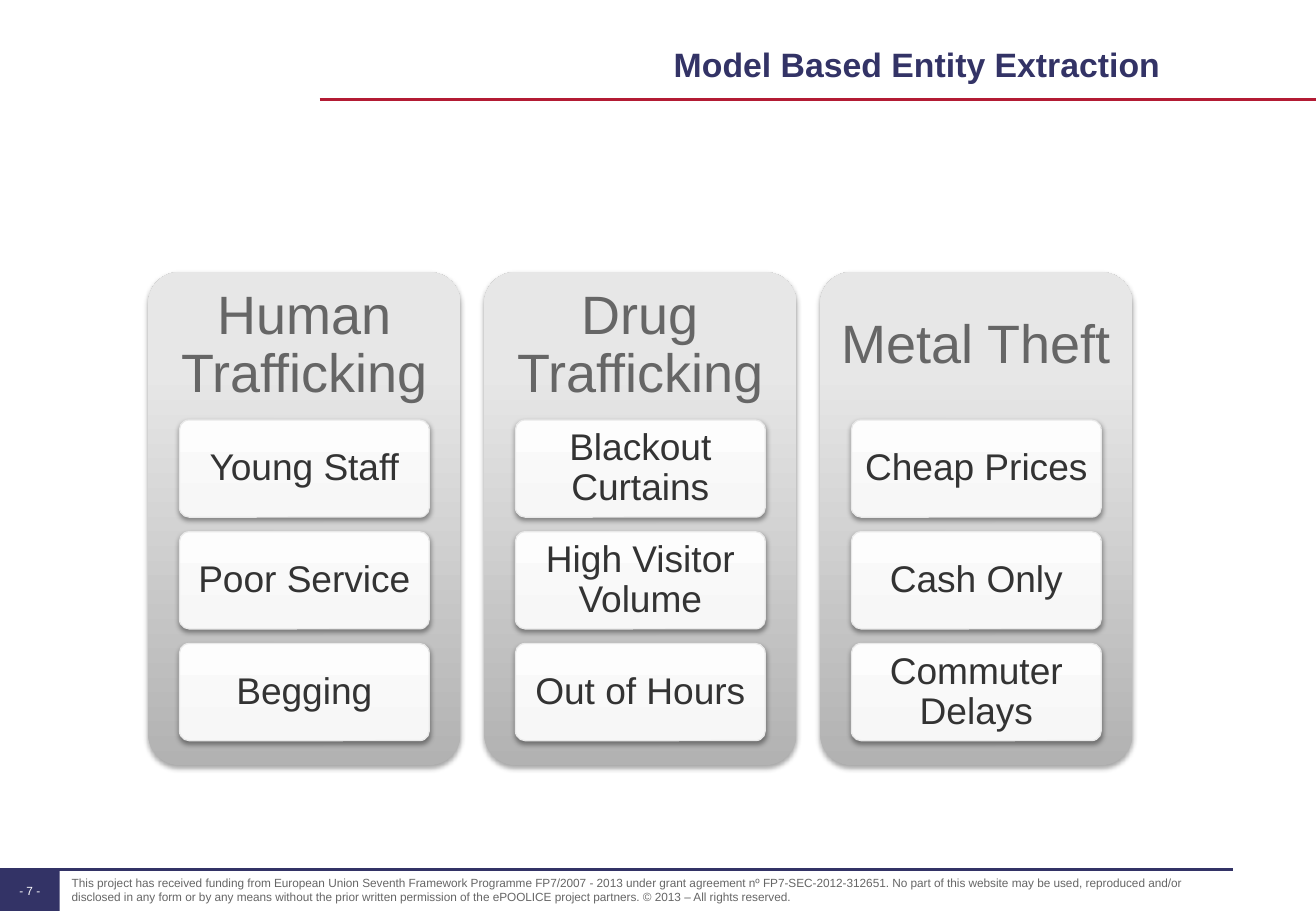
from lxml.etree import SubElement
from pptx import Presentation
from pptx.dml.color import RGBColor
from pptx.enum.shapes import MSO_CONNECTOR, MSO_SHAPE
from pptx.enum.text import MSO_ANCHOR, MSO_AUTO_SIZE, PP_ALIGN
from pptx.oxml import parse_xml
from pptx.oxml.ns import nsdecls, qn
from pptx.util import Inches, Pt

SLIDE_W, SLIDE_H = 10.83, 7.5
NAVY, RED, GREY, DARK, WHITE = "333366", "B31B34", "666666", "333333", "FFFFFF"
COLUMN_STOPS = [(0, "B2B2B2"), (80, "E7E7E7"), (100, "E8E8E8")]
CARD_STOPS = [(0, "F7F7F7"), (35, "F9F9F9"), (100, "FDFDFD")]

# Column and card grid, in inches
GRID_LEFT, GRID_TOP = 1.22, 2.24
COLUMN_W, COLUMN_H, COLUMN_PITCH = 2.57, 4.06, 2.765
HEADING_H = 0.3 * COLUMN_H
CARD_W, CARD_H, CARD_PITCH = 0.8 * COLUMN_W, 0.8, 0.92
FOOTER_TOP = 7.16

INDICATORS = {
    "Human Trafficking": ["Young Staff", "Poor Service", "Begging"],
    "Drug Trafficking": ["Blackout Curtains", "High Visitor Volume", "Out of Hours"],
    "Metal Theft": ["Cheap Prices", "Cash Only", "Commuter Delays"],
}
FUNDING_NOTE = (
    "This project has received funding from European Union Seventh Framework Programme "
    "FP7/2007 - 2013 under grant agreement nº FP7-SEC-2012-312651. No part of this website "
    "may be used, reproduced and/or disclosed in any form or by any means without the prior "
    "written permission of the ePOOLICE project partners. © 2013 – All rights reserved."
)


def rgb(hex_color):
    return RGBColor.from_string(hex_color)


def write_text(shape, text, size, color, bold=False, align=PP_ALIGN.CENTER,
               anchor=MSO_ANCHOR.MIDDLE, insets=(0, 0, 0, 0), spacing=None):
    """Fill a shape with one paragraph; insets are left, top, right, bottom."""
    frame = shape.text_frame
    frame.word_wrap = True
    frame.auto_size = MSO_AUTO_SIZE.NONE
    frame.vertical_anchor = anchor
    (frame.margin_left, frame.margin_top,
     frame.margin_right, frame.margin_bottom) = map(Inches, insets)
    paragraph = frame.paragraphs[0]
    paragraph.alignment = align
    paragraph.line_spacing = spacing
    run = paragraph.add_run()
    run.text = text
    run.font.name = "Arial"
    run.font.size = Pt(size)
    run.font.bold = bold
    run.font.color.rgb = rgb(color)


def add_text(slide, left, top, width, height, text, **text_format):
    box = slide.shapes.add_textbox(*map(Inches, (left, top, width, height)))
    write_text(box, text, **text_format)


def add_rule(slide, left, right, y, color):
    rule = slide.shapes.add_connector(
        MSO_CONNECTOR.STRAIGHT, Inches(left), Inches(y), Inches(right), Inches(y))
    rule.line.color.rgb = rgb(color)
    rule.line.width = Pt(1.5)
    SubElement(rule._element.spPr, qn("a:effectLst"))


def fill_upward(shape, stops):
    """Give a shape a gradient whose first stop lies at the bottom."""
    stop_xml = "".join(
        f'<a:gs pos="{share * 1000}"><a:srgbClr val="{color}"/></a:gs>'
        for share, color in stops)
    gradient = parse_xml(
        f'<a:gradFill {nsdecls("a")} rotWithShape="1"><a:gsLst>{stop_xml}</a:gsLst>'
        '<a:lin ang="16200000" scaled="0"/></a:gradFill>')
    shape._element.spPr.find(qn("a:prstGeom")).addnext(gradient)


def drop_shadow(shape, opacity, distance):
    shape.shadow.inherit = False
    shape._element.spPr.find(qn("a:effectLst")).append(parse_xml(
        f'<a:outerShdw {nsdecls("a")} blurRad="{Pt(3.1)}" dist="{Pt(distance)}" '
        f'dir="5400000" rotWithShape="0"><a:srgbClr val="000000">'
        f'<a:alpha val="{opacity * 1000}"/></a:srgbClr></a:outerShdw>'))


def add_panel(slide, left, top, width, height, stops, opacity, distance, outline=None):
    panel = slide.shapes.add_shape(
        MSO_SHAPE.ROUNDED_RECTANGLE, *map(Inches, (left, top, width, height)))
    panel.adjustments[0] = 0.1
    fill_upward(panel, stops)
    if outline:
        panel.line.color.rgb = rgb(outline)
        panel.line.width = Pt(0.75)
    else:
        panel.line.fill.background()
    drop_shadow(panel, opacity, distance)
    return panel


def add_column(slide, left, heading, indicators):
    add_panel(slide, left, GRID_TOP, COLUMN_W, COLUMN_H, COLUMN_STOPS, 35, 1.8)
    add_text(slide, left, GRID_TOP, COLUMN_W, HEADING_H, heading,
             size=32, color=GREY, insets=[0.13] * 4, spacing=0.9)
    for row, indicator in enumerate(indicators):
        card = add_panel(slide, left + (COLUMN_W - CARD_W) / 2,
                         GRID_TOP + HEADING_H + row * CARD_PITCH,
                         CARD_W, CARD_H, CARD_STOPS, 38, 1.6, outline="E9E9E9")
        write_text(card, indicator, size=22, color=DARK,
                   insets=(0.06, 0.05, 0.06, 0.05), spacing=0.9)


def add_footer(slide):
    page_tab = slide.shapes.add_shape(
        MSO_SHAPE.RECTANGLE, 0, Inches(FOOTER_TOP), Inches(0.49),
        Inches(SLIDE_H - FOOTER_TOP))
    page_tab.shadow.inherit = False
    page_tab.fill.solid()
    page_tab.fill.fore_color.rgb = rgb(NAVY)
    page_tab.line.fill.background()
    write_text(page_tab, "- 7 -", size=7, color=WHITE)
    add_rule(slide, 0, 10.15, FOOTER_TOP, NAVY)
    add_text(slide, 0.59, FOOTER_TOP, 9.41, 0.33, FUNDING_NOTE,
             size=7, color=GREY, align=PP_ALIGN.LEFT)


def add_title(slide, text):
    title = slide.shapes.title
    title.left, title.top, title.width, title.height = map(
        Inches, (GRID_LEFT, 0.17, 8.53, 0.9))
    write_text(title, text, size=20, color=NAVY, bold=True, align=PP_ALIGN.RIGHT,
               anchor=MSO_ANCHOR.TOP, insets=(0, 0.16, 0.2, 0), spacing=1.1)
    add_rule(slide, 2.63, SLIDE_W, 0.82, RED)


def main():
    deck = Presentation()
    deck.slide_width, deck.slide_height = Inches(SLIDE_W), Inches(SLIDE_H)
    slide = deck.slides.add_slide(deck.slide_layouts.get_by_name("Title Only"))
    add_footer(slide)
    add_title(slide, "Model Based Entity Extraction")
    for column, (heading, indicators) in enumerate(INDICATORS.items()):
        add_column(slide, GRID_LEFT + column * COLUMN_PITCH, heading, indicators)
    deck.save("out.pptx")


if __name__ == "__main__":
    main()
